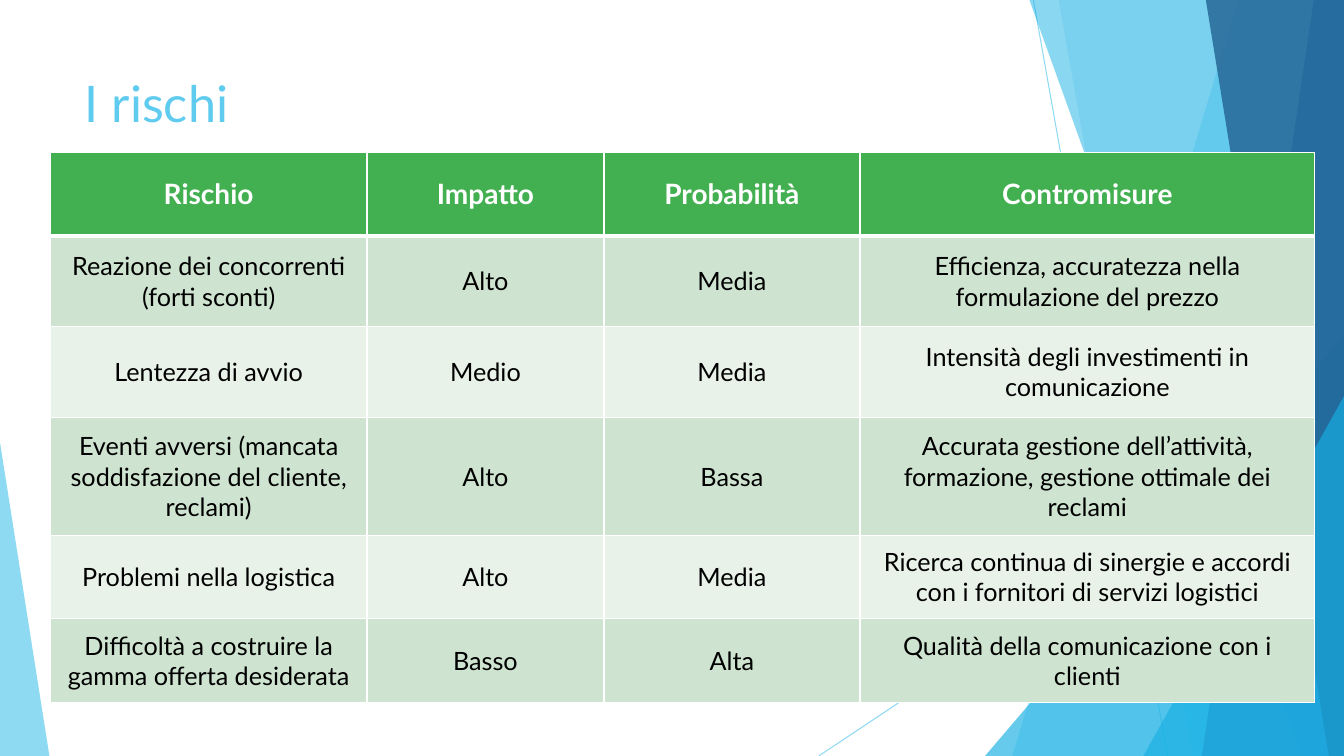
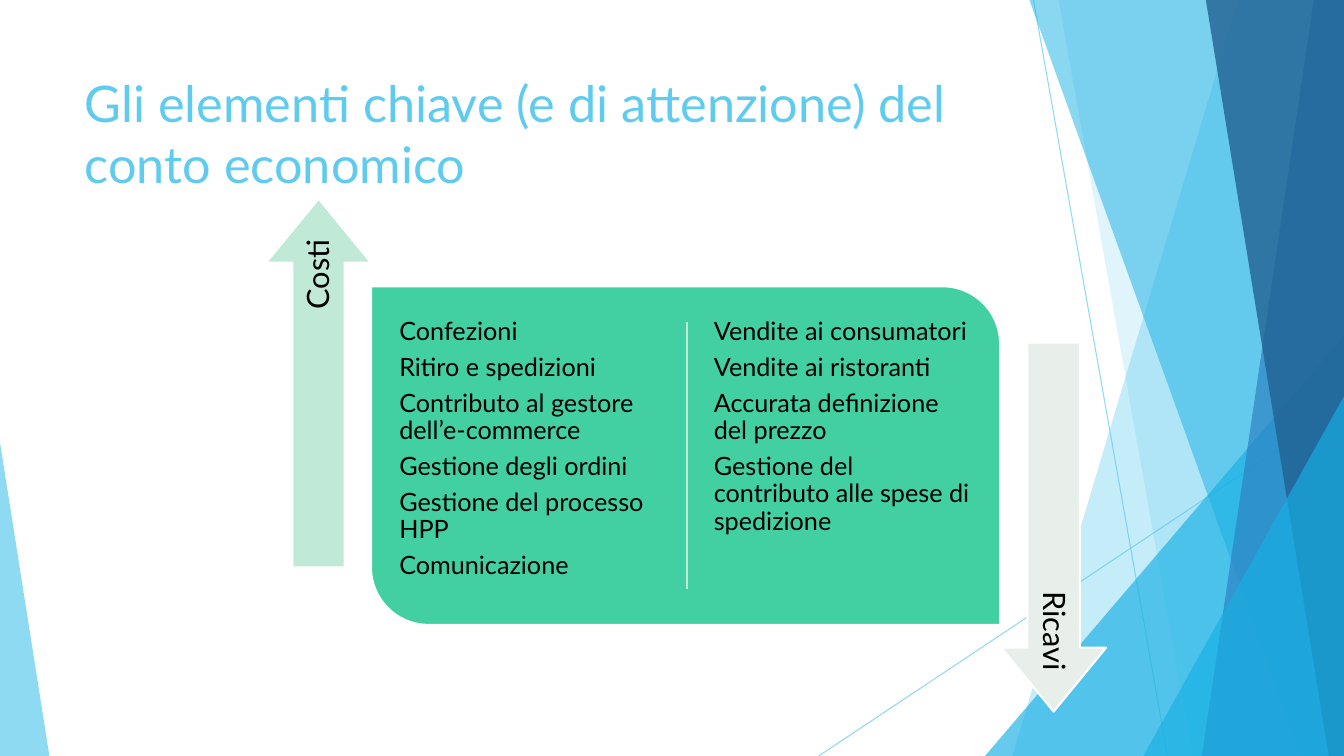
from lxml import etree
from pptx import Presentation
from pptx import util as u
from pptx.dml import color as dml
from pptx.enum import shapes, text
from pptx.oxml import ns

PX = 9144
WIDTH, HEIGHT = 1333, 750
FONT = "Lato"
COLORS = {
    "white": "FFFFFF",
    "black": "000000",
    "sky": "5FCBEF",
    "cyan": "17B0E4",
    "blue": "2E83C3",
    "navy": "226292",
    "header": "42B051",
    "row_dark": "CFE4D0",
    "row_light": "E9F2E9",
    "panel": "42D0A2",
    "mint": "C0E9D7",
    "mist": "E8EFEB",
}


def px(*lengths):
    return [u.Emu(length * PX) for length in lengths]


def rgb(name):
    return dml.RGBColor.from_string(COLORS[name])


def write(frame, lines, size=18, color="black", bold=False, align="LEFT",
          anchor="TOP", inset=None, spacing=None, after=None):
    frame.word_wrap = True
    frame.auto_size = text.MSO_AUTO_SIZE.NONE
    frame.vertical_anchor = getattr(text.MSO_ANCHOR, anchor)
    if inset is not None:
        frame.margin_left = frame.margin_right = u.Emu(inset * PX)
        frame.margin_top = frame.margin_bottom = u.Emu(inset * PX)
    for index, line in enumerate(lines):
        paragraph = frame.add_paragraph() if index else frame.paragraphs[0]
        paragraph.alignment = getattr(text.PP_ALIGN, align)
        paragraph.line_spacing = spacing
        if after is not None:
            paragraph.space_after = u.Pt(after)
        run = paragraph.add_run()
        run.text = line
        run.font.name = FONT
        run.font.size = u.Pt(size)
        run.font.bold = bold
        run.font.color.rgb = rgb(color)


def set_alpha(shape, percent):
    for color in shape.element.spPr.iter(ns.qn("a:srgbClr")):
        etree.SubElement(color, ns.qn("a:alpha"), val=str(percent * 1000))


def add_border(cell, side, width):
    properties = cell._tc.get_or_add_tcPr()
    border = etree.SubElement(properties, ns.qn(f"a:ln{side}"), w=str(u.Pt(width)))
    fill = etree.SubElement(border, ns.qn("a:solidFill"))
    etree.SubElement(fill, ns.qn("a:srgbClr"), val=COLORS["white"])


class Deck:
    def __init__(self):
        self.presentation = Presentation()
        self.presentation.slide_width, self.presentation.slide_height = px(WIDTH, HEIGHT)
        self.slide = None

    def add_slide(self, title):
        self.slide = self.presentation.slides.add_slide(self.presentation.slide_layouts[5])
        self.decorate()
        shape = self.slide.shapes.title
        shape.left, shape.top, shape.width, shape.height = px(74, 67, 940, 144)
        write(shape.text_frame, [title], size=36, color="sky")

    def decorate(self):
        self.line(1025, 0, 1158, HEIGHT, "sky", 0.75, 70)
        self.line(WIDTH, 403, 812, HEIGHT, "sky", 0.75, 70)
        self.band(1228, 1004, "sky", 36)
        self.band(1050, 1183, "sky", 20)
        self.corner(977, 333, 356, "cyan", 66, 1)
        self.band(1021, 1291, "cyan", 50)
        self.band(1303, 1192, "blue", 70)
        self.band(1196, 1318, "navy", 80)
        self.corner(1134, 393, 199, "cyan", 66, 1)
        self.corner(0, 439, 49, "sky", 70, 0)

    def paint(self, shape, fill, alpha=100, outline=None):
        shape.shadow.inherit = False
        shape.fill.solid()
        shape.fill.fore_color.rgb = rgb(fill)
        if outline:
            shape.line.color.rgb = rgb(outline)
            shape.line.width = u.Pt(1.5)
        else:
            shape.line.fill.background()
        if alpha < 100:
            set_alpha(shape, alpha)

    def line(self, x1, y1, x2, y2, color, width, alpha=100):
        connector = self.slide.shapes.add_connector(
            shapes.MSO_CONNECTOR.STRAIGHT, *px(x1, y1, x2, y2))
        connector.line.color.rgb = rgb(color)
        connector.line.width = u.Pt(width)
        etree.SubElement(connector.element.spPr, ns.qn("a:effectLst"))
        if alpha < 100:
            set_alpha(connector, alpha)

    def band(self, top_x, bottom_x, fill, alpha):
        builder = self.slide.shapes.build_freeform(top_x, 0, scale=PX)
        builder.add_line_segments([(WIDTH, 0), (WIDTH, HEIGHT), (bottom_x, HEIGHT)])
        self.paint(builder.convert_to_shape(), fill, alpha)

    def corner(self, left, top, width, fill, alpha, apex):
        self.shape("ISOSCELES_TRIANGLE", left, top, width, HEIGHT - top, fill,
                   alpha=alpha, adjustments=[apex])

    def shape(self, kind, left, top, width, height, fill, alpha=100,
              outline=None, adjustments=(), rotation=0):
        shape = self.slide.shapes.add_shape(
            getattr(shapes.MSO_SHAPE, kind), *px(left, top, width, height))
        for index, value in enumerate(adjustments):
            shape.adjustments[index] = value
        shape.rotation = rotation
        self.paint(shape, fill, alpha, outline)

    def text(self, left, top, width, height, lines, rotation=0, **style):
        box = self.slide.shapes.add_textbox(*px(left, top, width, height))
        box.rotation = rotation
        write(box.text_frame, lines, **style)

    def arrow(self, left, top, label_left, label_top, label, fill, rotation):
        self.shape("RIGHT_ARROW", left, top, 366, 104, fill, outline="white",
                   adjustments=(0.5, 0.61), rotation=rotation)
        self.text(label_left, label_top, 335, 52, [label], rotation=rotation,
                  size=22, align="RIGHT", anchor="MIDDLE", inset=9, spacing=0.9)

    def table(self, left, top, widths, heights, rows):
        frame = self.slide.shapes.add_table(
            len(rows), len(widths), *px(left, top, sum(widths), sum(heights)))
        table = frame.table
        for column, width in zip(table.columns, px(*widths)):
            column.width = width
        for row, height in zip(table.rows, px(*heights)):
            row.height = height
        for row_index, row in enumerate(rows):
            header = row_index == 0
            fill = "header" if header else ("row_light", "row_dark")[row_index % 2]
            for column_index, value in enumerate(row):
                cell = table.cell(row_index, column_index)
                write_cell(cell, value, header)
                for side in "LRTB":
                    thick = (side, row_index) in (("B", 0), ("T", 1))
                    add_border(cell, side, 3 if thick else 1)
                cell.fill.solid()
                cell.fill.fore_color.rgb = rgb(fill)


def write_cell(cell, value, header):
    cell.vertical_anchor = text.MSO_ANCHOR.MIDDLE
    write(cell.text_frame, [value], size=20 if header else 18, bold=header,
          color="white" if header else "black", align="CENTER", anchor="MIDDLE")


RISKS = [
    ("Rischio", "Impatto", "Probabilità", "Contromisure"),
    ("Reazione dei concorrenti (forti sconti)", "Alto", "Media",
     "Efficienza, accuratezza nella formulazione del prezzo"),
    ("Lentezza di avvio", "Medio", "Media",
     "Intensità degli investimenti in comunicazione"),
    ("Eventi avversi (mancata soddisfazione del cliente, reclami)", "Alto", "Bassa",
     "Accurata gestione dell’attività, formazione, gestione ottimale dei reclami"),
    ("Problemi nella logistica", "Alto", "Media",
     "Ricerca continua di sinergie e accordi con i fornitori di servizi logistici"),
    ("Difficoltà a costruire la gamma offerta desiderata", "Basso", "Alta",
     "Qualità della comunicazione con i clienti"),
]
COSTS = ["Confezioni", "Ritiro e spedizioni", "Contributo al gestore dell’e-commerce",
         "Gestione degli ordini", "Gestione del processo HPP", "Comunicazione"]
REVENUES = ["Vendite ai consumatori", "Vendite ai ristoranti",
            "Accurata definizione del prezzo",
            "Gestione del contributo alle spese di spedizione"]


def main():
    deck = Deck()

    deck.add_slide("I rischi")
    deck.table(50, 151, (314, 235, 254, 451), (83, 90, 90, 117, 83, 83), RISKS)

    deck.add_slide("Gli elementi chiave (e di attenzione) del conto economico")
    deck.shape("ROUND_2_DIAG_RECTANGLE", 368, 284, 624, 336, "panel",
               outline="white", adjustments=(0, 0.17))
    deck.line(681, 319, 681, 584, "mint", 1.5)
    for left, items in ((389, COSTS), (701, REVENUES)):
        deck.text(left, 309, 271, 285, items, inset=7, spacing=0.9, after=6.3)
    deck.arrow(133, 328, 149, 370, "Costi", "mint", 270)
    deck.arrow(862, 471, 877, 481, "Ricavi", "mist", 90)

    deck.presentation.save("out.pptx")


if __name__ == "__main__":
    main()
